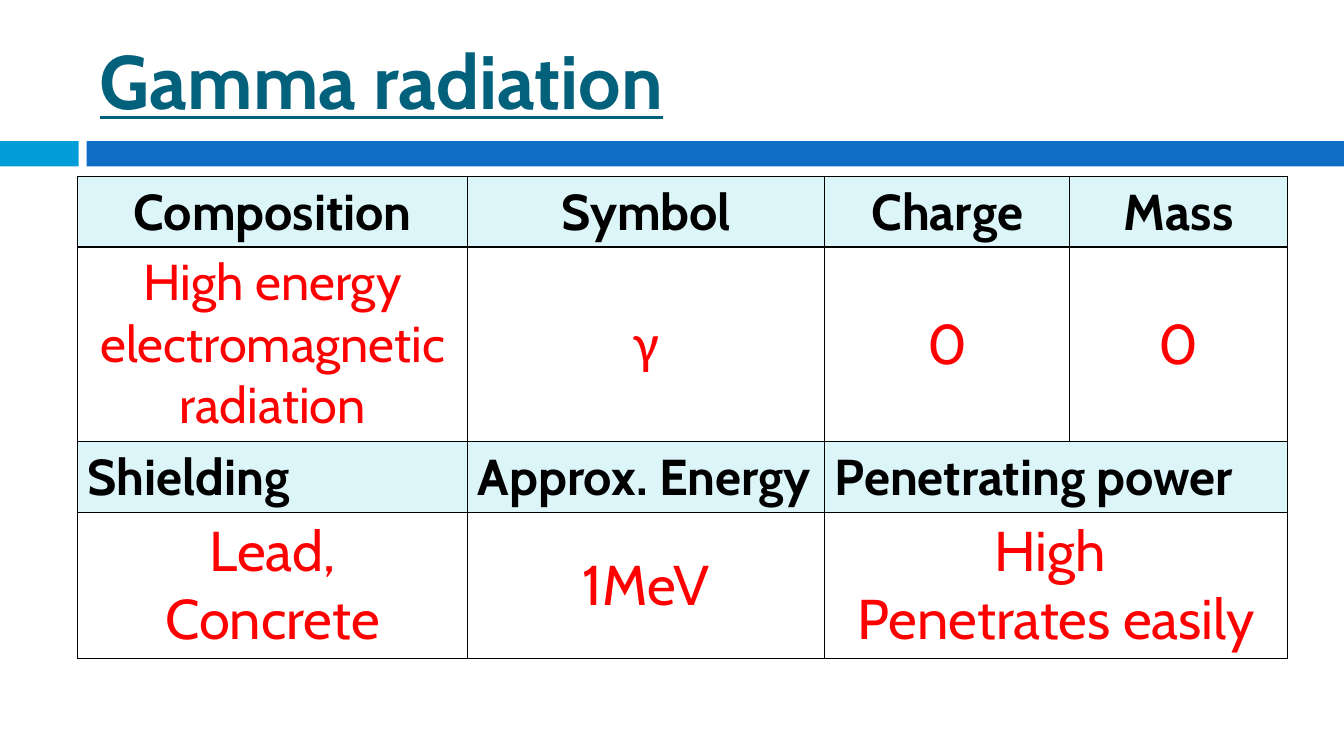
"""Build the slide on the properties of gamma radiation."""
from lxml import etree
from pptx import Presentation
from pptx.dml.color import RGBColor
from pptx.enum.shapes import MSO_SHAPE
from pptx.enum.text import MSO_ANCHOR, PP_ALIGN
from pptx.oxml import parse_xml
from pptx.oxml.ns import nsdecls
from pptx.util import Inches, Pt

COLORS = {
    "accent": "009DD9",
    "band": "0F6FC6",
    "title": "04617B",
    "heading": "DBF5F9",
    "answer": "FF0000",
    "black": "000000",
    "white": "FFFFFF",
}


def color(name):
    return RGBColor.from_string(COLORS[name])


def format_runs(frame, styling):
    for paragraph in frame.paragraphs:
        paragraph.alignment = styling["align"]
        for run in paragraph.runs:
            run.font.color.rgb = color(styling["color"])
            for attribute, value in styling["font"].items():
                setattr(run.font, attribute, value)


presentation = Presentation()
presentation.slide_width = Inches(13.33)
presentation.slide_height = Inches(7.5)
slide = presentation.slides.add_slide(presentation.slide_layouts[6])

for left, width, fill in [(0, 0.78, "accent"), (0.86, 12.47, "band")]:
    stripe = slide.shapes.add_shape(
        MSO_SHAPE.RECTANGLE, Inches(left), Inches(1.4), Inches(width), Inches(0.25)
    )
    stripe.shadow.inherit = False
    stripe.fill.solid()
    stripe.fill.fore_color.rgb = color(fill)
    stripe.line.fill.background()

title = slide.shapes.add_textbox(
    Inches(0.89), Inches(0.25), Inches(11.89), Inches(1.08)
).text_frame
title.word_wrap = True
title.vertical_anchor = MSO_ANCHOR.MIDDLE
title.text = "Gamma radiation"
title_font = {"name": "Cabin", "size": Pt(54), "bold": True, "underline": True}
format_runs(title, {"align": PP_ALIGN.LEFT, "color": "title", "font": title_font})

column_widths = [3.87, 3.54, 2.43, 2.16]
row_heights = [0.7, 1.93, 0.7, 1.45]
contents = [
    ["Composition", "Symbol", "Charge", "Mass"],
    ["High energy electromagnetic radiation", "γ", "0", "0"],
    ["Shielding", "Approx. Energy", "Penetrating power", ""],
    ["Lead,\nConcrete", "1MeV", "High \vPenetrates easily", ""],
]
properties = slide.shapes.add_table(
    len(row_heights), len(column_widths),
    Inches(0.77), Inches(1.75), Inches(sum(column_widths)), Inches(sum(row_heights)),
).table
for column, width in zip(properties.columns, column_widths):
    column.width = Inches(width)
for row, height in zip(properties.rows, row_heights):
    row.height = Inches(height)
for merged_row in (2, 3):
    properties.cell(merged_row, 2).merge(properties.cell(merged_row, 3))

for row_index, texts in enumerate(contents):
    is_heading = row_index % 2 == 0
    for column_index, text in enumerate(texts):
        cell = properties.cell(row_index, column_index)
        cell.vertical_anchor = MSO_ANCHOR.TOP if is_heading else MSO_ANCHOR.MIDDLE
        for edge in ("lnL", "lnR", "lnT", "lnB"):
            border = parse_xml(f'<a:{edge} {nsdecls("a")} w="12700"/>')
            line_fill = etree.SubElement(border, border.tag.replace(edge, "solidFill"))
            line_color = etree.SubElement(line_fill, border.tag.replace(edge, "srgbClr"))
            line_color.set("val", COLORS["black"])
            cell._tc.get_or_add_tcPr().append(border)
        cell.fill.solid()
        cell.fill.fore_color.rgb = color("heading" if is_heading else "white")
        if not text:
            continue
        cell.text_frame.text = text
        small = is_heading or (row_index, column_index) == (1, 0)
        format_runs(cell.text_frame, {
            "align": PP_ALIGN.LEFT if row_index == 2 else PP_ALIGN.CENTER,
            "color": "black" if is_heading else "answer",
            "font": {
                "name": "Calibri" if text == "γ" else "Cabin",
                "size": Pt(36 if small else 40),
                "bold": is_heading,
            },
        })

presentation.save("out.pptx")
